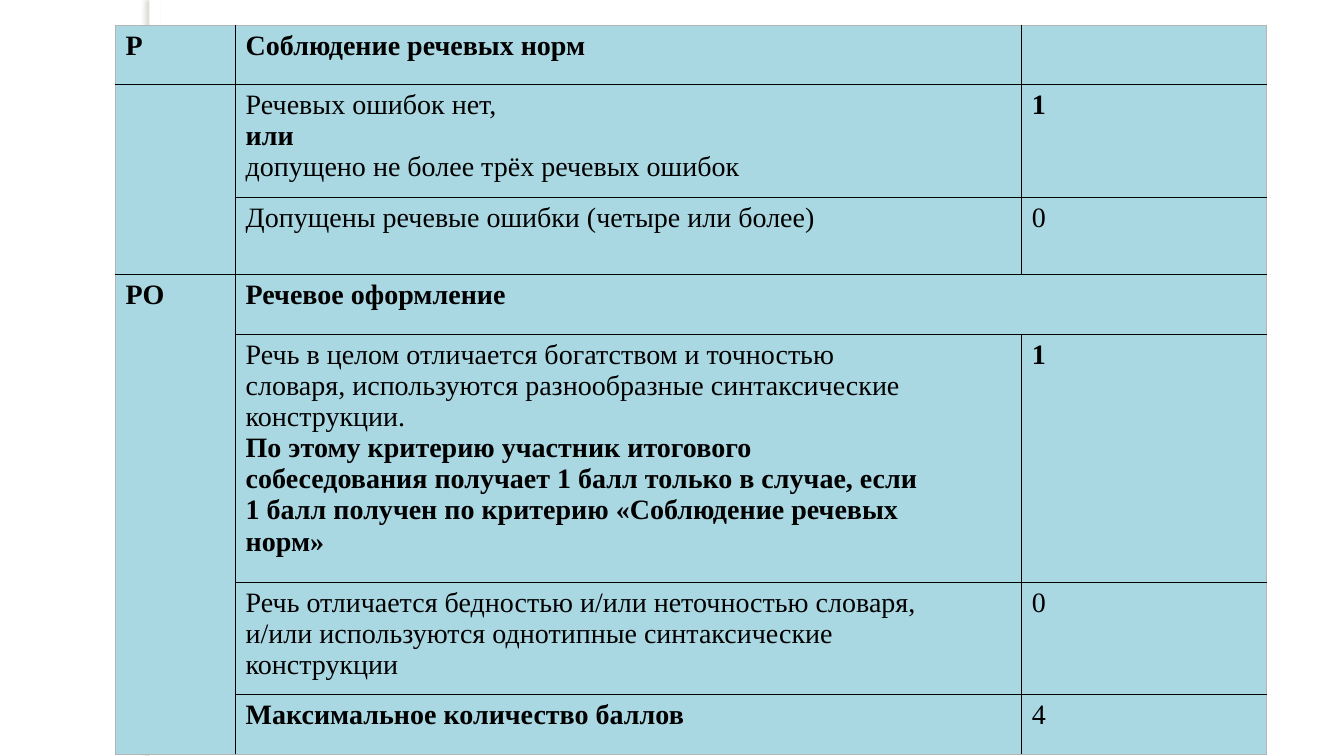
from dataclasses import dataclass

from lxml.etree import SubElement
from pptx import Presentation
from pptx.dml.color import RGBColor
from pptx.enum.shapes import MSO_SHAPE
from pptx.oxml.ns import qn
from pptx.util import Pt


@dataclass(frozen=True)
class Theme:
    font: str = "Times New Roman"
    size: float = 20
    ink: str = "000000"
    cell: str = "A9D7E2"
    frame: str = "B5B5B5"
    strip: str = "FFFFFF"
    strip_shadow: str = "736F63"
    rule: float = 1


THEME = Theme()
COLUMN_WIDTHS = (85.7, 561.6, 174.9)
ROW_HEIGHTS = (42.5, 80.6, 55, 42.9, 177, 80, 42.8)
MERGES = (((1, 0), (2, 0)), ((3, 0), (6, 0)), ((3, 1), (3, 2)))

BOLD, PLAIN = True, False
CRITERIA = {
    (0, 0): [("Р", BOLD)],
    (0, 1): [("Соблюдение речевых норм", BOLD)],
    (1, 1): [
        ("Речевых ошибок нет,", PLAIN),
        ("или", BOLD),
        ("допущено не более трёх речевых ошибок", PLAIN),
    ],
    (1, 2): [("1", BOLD)],
    (2, 1): [("Допущены речевые ошибки (четыре или более)", PLAIN)],
    (2, 2): [("0", PLAIN)],
    (3, 0): [("РО", BOLD)],
    (3, 1): [("Речевое оформление", BOLD)],
    (4, 1): [
        ("Речь в целом отличается богатством и точностью", PLAIN),
        ("словаря, используются разнообразные синтаксические", PLAIN),
        ("конструкции.", PLAIN),
        ("По этому критерию участник итогового", BOLD),
        ("собеседования получает 1 балл только в случае, если", BOLD),
        ("1 балл получен по критерию «Соблюдение речевых", BOLD),
        ("норм»", BOLD),
    ],
    (4, 2): [("1", BOLD)],
    (5, 1): [
        ("Речь отличается бедностью и/или неточностью словаря,", PLAIN),
        ("и/или используются однотипные синтаксические", PLAIN),
        ("конструкции", PLAIN),
    ],
    (5, 2): [("0", PLAIN)],
    (6, 1): [("Максимальное количество баллов", BOLD)],
    (6, 2): [("4", PLAIN)],
}


def write(paragraph, text, *, bold=False, size=THEME.size, color=THEME.ink):
    run = paragraph.add_run()
    run.text = text
    run.font.name = THEME.font
    run.font.size = Pt(size)
    run.font.bold = bold
    run.font.color.rgb = RGBColor.from_string(color)


def add_strip(slide, left, top, width, height):
    strip = slide.shapes.add_shape(
        MSO_SHAPE.RECTANGLE, Pt(left), Pt(top), Pt(width), Pt(height)
    )
    strip.shadow.inherit = False
    strip.fill.solid()
    strip.fill.fore_color.rgb = RGBColor.from_string(THEME.strip)
    strip.line.fill.background()
    effects = strip._element.spPr.find(qn("a:effectLst"))
    shadow = SubElement(
        effects, qn("a:outerShdw"),
        blurRad=str(Pt(3)), dist=str(Pt(3)), dir="10800000",
    )
    color = SubElement(shadow, qn("a:srgbClr"), val=THEME.strip_shadow)
    SubElement(color, qn("a:alpha"), val="25000")


def draw_borders(cell, row, column):
    last_row = row + cell.span_height if cell.is_merge_origin else row + 1
    last_column = column + cell.span_width if cell.is_merge_origin else column + 1
    outer_sides = {
        "L": column == 0,
        "R": last_column == len(COLUMN_WIDTHS),
        "T": row == 0,
        "B": last_row == len(ROW_HEIGHTS),
    }
    properties = cell._tc.get_or_add_tcPr()
    for side, is_outer in outer_sides.items():
        border = SubElement(properties, qn(f"a:ln{side}"), w=str(Pt(THEME.rule)))
        fill = SubElement(border, qn("a:solidFill"))
        color = THEME.frame if is_outer else THEME.ink
        SubElement(fill, qn("a:srgbClr"), val=color)


def format_cell(cell, row, column):
    if not cell.is_spanned:
        draw_borders(cell, row, column)
    cell.fill.solid()
    cell.fill.fore_color.rgb = RGBColor.from_string(THEME.cell)
    for index, (text, bold) in enumerate(CRITERIA.get((row, column), [])):
        frame = cell.text_frame
        paragraph = frame.add_paragraph() if index else frame.paragraphs[0]
        write(paragraph, text, bold=bold)


def add_criteria(slide, left, top):
    criteria = slide.shapes.add_table(
        len(ROW_HEIGHTS), len(COLUMN_WIDTHS), Pt(left), Pt(top),
        Pt(sum(COLUMN_WIDTHS)), Pt(sum(ROW_HEIGHTS)),
    ).table
    criteria.first_row = False
    criteria.horz_banding = False
    for column, width in zip(criteria.columns, COLUMN_WIDTHS):
        column.width = Pt(width)
    for row, height in zip(criteria.rows, ROW_HEIGHTS):
        row.height = Pt(height)
    for first, last in MERGES:
        criteria.cell(*first).merge(criteria.cell(*last))
    for row in range(len(ROW_HEIGHTS)):
        for column in range(len(COLUMN_WIDTHS)):
            format_cell(criteria.cell(row, column), row, column)


def main():
    presentation = Presentation()
    presentation.slide_width = Pt(960)
    presentation.slide_height = Pt(540)
    slide = presentation.slides.add_slide(presentation.slide_layouts[6])
    add_strip(slide, 106.6, 0, 7.9, 540)
    add_criteria(slide, 82.6, 18)
    presentation.save("out.pptx")


if __name__ == "__main__":
    main()
